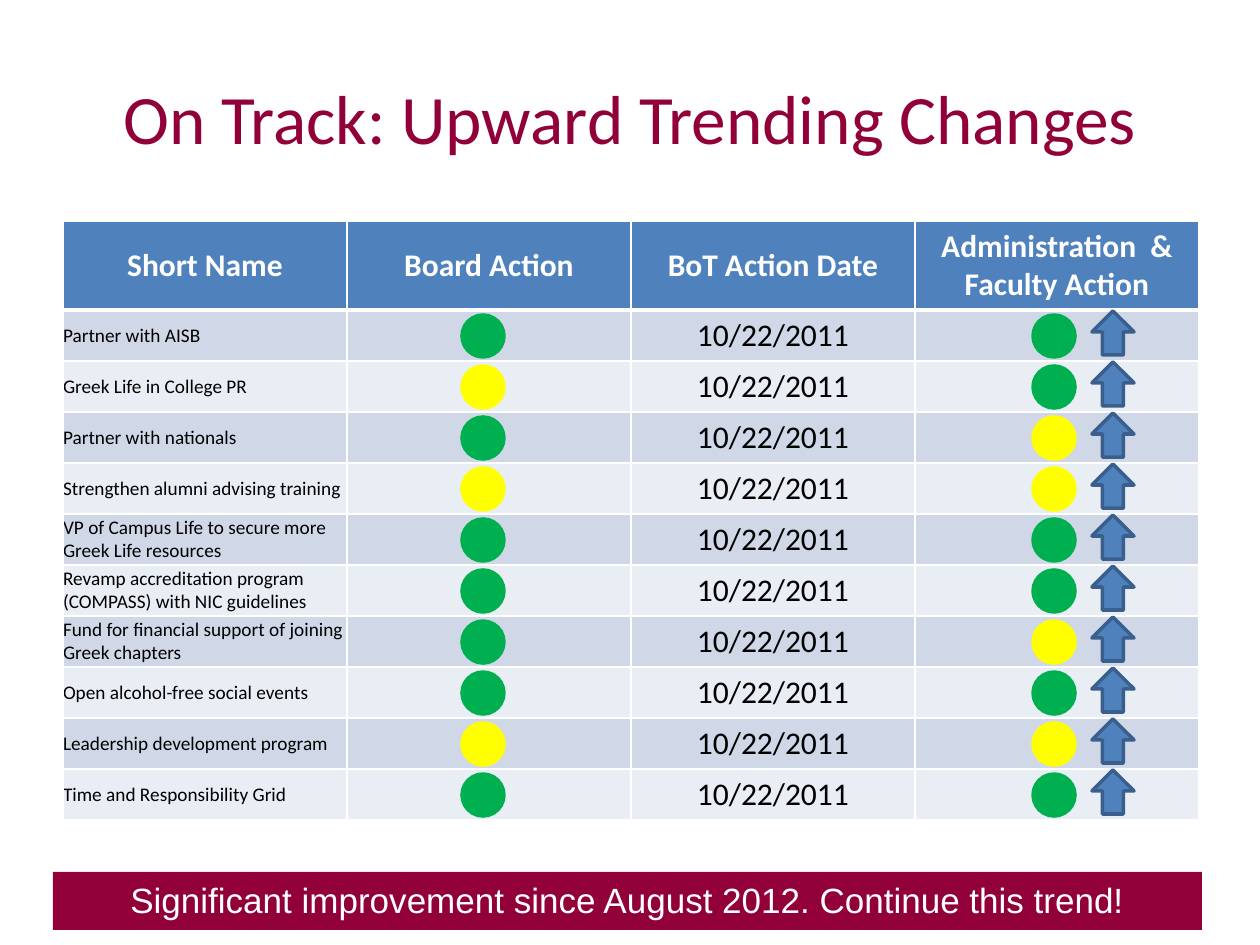
from lxml.etree import SubElement
from pptx import Presentation
from pptx.dml.color import RGBColor
from pptx.enum.shapes import MSO_SHAPE
from pptx.enum.text import MSO_ANCHOR, MSO_AUTO_SIZE, PP_ALIGN
from pptx.oxml.ns import qn
from pptx.util import Emu, Pt

EMU_PER_PX = 914400 / 126

MAROON = RGBColor(0x91, 0x00, 0x39)
WHITE = RGBColor(0xFF, 0xFF, 0xFF)
BLACK = RGBColor(0x00, 0x00, 0x00)
BLUE = RGBColor(0x4F, 0x81, 0xBD)
DARK_BLUE = RGBColor(0x3A, 0x5F, 0x8C)
BAND_DARK = RGBColor(0xD0, 0xD8, 0xE8)
BAND_LIGHT = RGBColor(0xE9, 0xED, 0xF4)
GREEN = RGBColor(0x00, 0xB0, 0x50)
YELLOW = RGBColor(0xFF, 0xFF, 0x00)

TABLE_LEFT, TABLE_TOP = 63, 221
COLUMN_WIDTH, HEADER_HEIGHT, ROW_HEIGHT = 284, 89, 51
CIRCLE_SIZE, ARROW_WIDTH, ARROW_HEIGHT = 42, 42, 44
BOARD_LEFT, ADMINISTRATION_LEFT, ARROW_LEFT = 462, 1033, 1092
FIRST_CIRCLE_TOP, FIRST_ARROW_TOP = 315, 311

HEADERS = ["Short Name", "Board Action", "BoT Action Date", "Administration  & Faculty Action"]
ACTION_DATE = "10/22/2011"
ACTIONS = [
    ("Partner with AISB", GREEN, GREEN),
    ("Greek Life in College PR", YELLOW, GREEN),
    ("Partner with nationals", GREEN, YELLOW),
    ("Strengthen alumni advising training", YELLOW, YELLOW),
    ("VP of Campus Life to secure more Greek Life resources", GREEN, GREEN),
    ("Revamp accreditation program (COMPASS) with NIC guidelines", GREEN, GREEN),
    ("Fund for financial support of joining Greek chapters", GREEN, YELLOW),
    ("Open alcohol-free social events", GREEN, GREEN),
    ("Leadership development program", YELLOW, YELLOW),
    ("Time and Responsibility Grid", GREEN, GREEN),
]


def px(length):
    """Turn pixels into EMU."""
    return Emu(round(length * EMU_PER_PX))


def write_text(frame, text, size, color, font="Calibri", align=PP_ALIGN.CENTER, bold=False):
    """Fill a text frame with one formatted paragraph."""
    frame.text = text
    frame.word_wrap = True
    para = frame.paragraphs[0]
    para.alignment = align
    for span in para.runs:
        span.font.size = Pt(size)
        span.font.name = font
        span.font.bold = bold
        span.font.color.rgb = color


def add_title(page, text):
    """Add the slide title."""
    box = page.shapes.add_textbox(px(63), px(38), px(1134), px(158))
    write_text(box.text_frame, text, 39.6, MAROON)
    box.text_frame.vertical_anchor = MSO_ANCHOR.MIDDLE


def add_marker(page, kind, left, top, width, height, fill, line=None):
    """Add a filled preset shape, outlined when a line colour is given."""
    shape = page.shapes.add_shape(kind, px(left), px(top), px(width), px(height))
    shape.shadow.inherit = False
    shape.fill.solid()
    shape.fill.fore_color.rgb = fill
    if line is None:
        shape.line.fill.background()
    else:
        shape.line.color.rgb = line
        shape.line.width = Pt(2)
    return shape


def set_borders(cell, top, bottom):
    """Give a cell white borders with the given top and bottom widths."""
    properties = cell._tc.get_or_add_tcPr()
    for side, width in (("L", 1), ("R", 1), ("T", top), ("B", bottom)):
        line = SubElement(properties, qn(f"a:ln{side}"), w=str(Pt(width)))
        fill = SubElement(line, qn("a:solidFill"))
        SubElement(fill, qn("a:srgbClr"), val=str(WHITE))


def style_cell(cell, fill, top=1, bottom=1):
    """Set a cell's borders, fill and vertical alignment."""
    set_borders(cell, top, bottom)
    cell.fill.solid()
    cell.fill.fore_color.rgb = fill
    cell.vertical_anchor = MSO_ANCHOR.MIDDLE


def add_action_table(page):
    """Add the table of actions and dates."""
    row_count, column_count = len(ACTIONS) + 1, len(HEADERS)
    frame = page.shapes.add_table(
        row_count, column_count, px(TABLE_LEFT), px(TABLE_TOP),
        px(COLUMN_WIDTH * column_count), px(HEADER_HEIGHT + ROW_HEIGHT * len(ACTIONS)))
    table = frame.table
    for column in table.columns:
        column.width = px(COLUMN_WIDTH)
    for index, row in enumerate(table.rows):
        row.height = px(ROW_HEIGHT if index else HEADER_HEIGHT)
    for column, header in enumerate(HEADERS):
        cell = table.cell(0, column)
        style_cell(cell, BLUE, bottom=3)
        write_text(cell.text_frame, header, 18, WHITE, bold=True)
    for row, (name, _, _) in enumerate(ACTIONS, start=1):
        for column in range(column_count):
            style_cell(table.cell(row, column), BAND_DARK if row % 2 else BAND_LIGHT,
                       top=3 if row == 1 else 1)
        name_cell = table.cell(row, 0)
        name_cell.margin_left = name_cell.margin_right = 0
        name_cell.margin_top = name_cell.margin_bottom = 0
        write_text(name_cell.text_frame, name, 11, BLACK, align=PP_ALIGN.LEFT)
        write_text(table.cell(row, 2).text_frame, ACTION_DATE, 18, BLACK)


def add_status_markers(page):
    """Add the status circles and upward arrow of every action."""
    for row, (_, board, administration) in enumerate(ACTIONS):
        offset = row * ROW_HEIGHT
        for left, color in ((BOARD_LEFT, board), (ADMINISTRATION_LEFT, administration)):
            add_marker(page, MSO_SHAPE.OVAL, left, FIRST_CIRCLE_TOP + offset,
                       CIRCLE_SIZE, CIRCLE_SIZE, color, color)
        add_marker(page, MSO_SHAPE.UP_ARROW, ARROW_LEFT, FIRST_ARROW_TOP + offset,
                   ARROW_WIDTH, ARROW_HEIGHT, BLUE, DARK_BLUE)


def add_banner(page, text):
    """Add the closing message bar."""
    banner = add_marker(page, MSO_SHAPE.RECTANGLE, 53, 872, 1149, 58, MAROON)
    frame = banner.text_frame
    write_text(frame, text, 20, WHITE, font="Arial")
    frame.vertical_anchor = MSO_ANCHOR.BOTTOM
    frame.margin_bottom = px(9)
    frame.auto_size = MSO_AUTO_SIZE.SHAPE_TO_FIT_TEXT


def main():
    """Build and save the slide."""
    deck = Presentation()
    deck.slide_width, deck.slide_height = px(1260), px(945)
    page = deck.slides.add_slide(deck.slide_layouts[6])
    add_title(page, "On Track: Upward Trending Changes")
    add_action_table(page)
    add_status_markers(page)
    add_banner(page, "Significant improvement since August 2012. Continue this trend!")
    deck.save("out.pptx")


if __name__ == "__main__":
    main()
